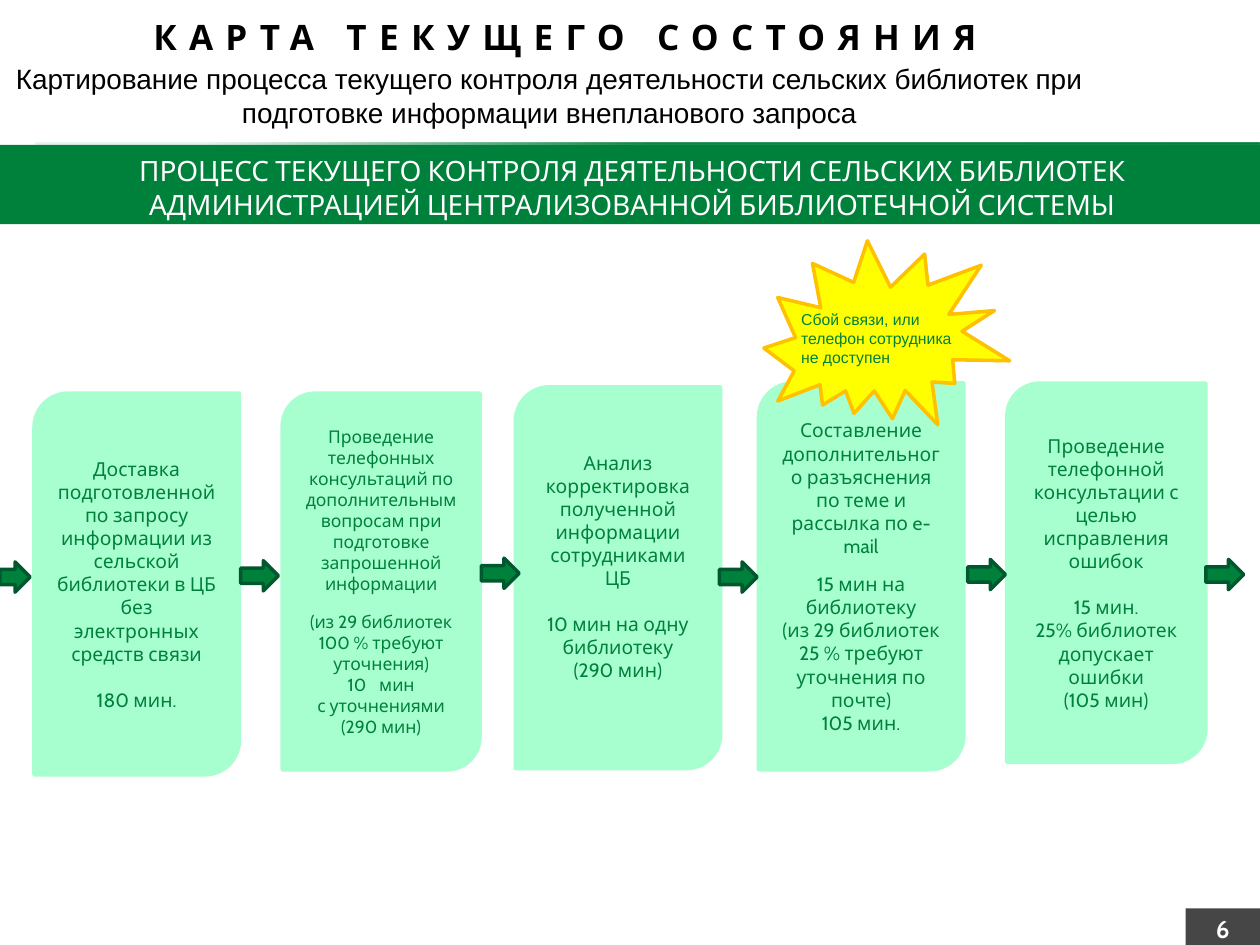
from lxml import etree
from pptx import Presentation
from pptx.dml.color import RGBColor
from pptx.enum.shapes import MSO_SHAPE
from pptx.enum.text import MSO_ANCHOR, PP_ALIGN
from pptx.oxml.ns import qn
from pptx.util import Inches, Pt

RECT = MSO_SHAPE.RECTANGLE
CARD = MSO_SHAPE.ROUND_2_DIAG_RECTANGLE
ARROW = MSO_SHAPE.RIGHT_ARROW
BURST = MSO_SHAPE.EXPLOSION2
TOP, MIDDLE = MSO_ANCHOR.TOP, MSO_ANCHOR.MIDDLE
LEFT, CENTER = PP_ALIGN.LEFT, PP_ALIGN.CENTER

GREEN = RGBColor(0x00, 0x81, 0x3B)
DARK_GREEN = RGBColor(0x00, 0x58, 0x2E)
MINT = RGBColor(0xA7, 0xFF, 0xCF)
YELLOW = RGBColor(0xFF, 0xFF, 0x00)
AMBER = RGBColor(0xFF, 0xC0, 0x00)
GRAY = RGBColor(0x46, 0x46, 0x46)
WHITE = RGBColor(0xFF, 0xFF, 0xFF)
BLACK = RGBColor(0x00, 0x00, 0x00)


class ProcessMap:
    heading_font = "Cabin"
    body_font = "Arial"

    def __init__(self, slide):
        self.slide = slide

    def shape(self, kind, box, fill, line=None):
        item = self.slide.shapes.add_shape(kind, *map(Inches, box))
        item.shadow.inherit = False
        item.fill.solid()
        item.fill.fore_color.rgb = fill
        if line is None:
            item.line.fill.background()
        else:
            item.line.color.rgb = line
            item.line.width = Pt(2)
        return item

    def label(self, item, lines, size, color, font=heading_font, bold=False,
              align=CENTER, anchor=MIDDLE):
        frame = item.text_frame
        frame.word_wrap = True
        frame.vertical_anchor = anchor
        frame.text = "\n".join(lines)
        for paragraph in frame.paragraphs:
            paragraph.alignment = align
            for run in paragraph.runs:
                run.font.size = Pt(size)
                run.font.name = font
                run.font.bold = bold
                run.font.color.rgb = color
        return frame

    def text(self, box, line, size, color, **style):
        item = self.slide.shapes.add_textbox(*map(Inches, box))
        return self.label(item, [line], size, color, **style)

    def card(self, box, lines, size, gap):
        """A process step; the gap in points parts the action from its timing."""
        item = self.shape(CARD, box, MINT, MINT)
        frame = self.label(item, lines, size, GREEN)
        frame.paragraphs[1].space_before = Pt(gap)
        return frame

    def arrow(self, left, top, width=0.3):
        self.shape(ARROW, (left, top, width, 0.24), GREEN, DARK_GREEN)

    def fading_line(self, box, stops):
        """A thin line that fades to the left; stops are (position, opacity)."""
        item = self.shape(RECT, box, GREEN)
        item.fill.gradient()
        item.fill.gradient_angle = 180
        stop_list = next(item._element.iter(qn("a:gsLst")))
        for old_stop in list(stop_list):
            stop_list.remove(old_stop)
        for position, opacity in stops:
            stop = etree.SubElement(stop_list, qn("a:gs"), pos=str(position * 1000))
            color = etree.SubElement(stop, qn("a:srgbClr"), val=str(GREEN))
            etree.SubElement(color, qn("a:alpha"), val=str(opacity * 1000))

    def number(self, paragraph, start):
        """Plain automatic numbering with a hanging indent."""
        props = paragraph._p.get_or_add_pPr()
        props.set("marL", str(Inches(0.25)))
        props.set("indent", str(Inches(-0.25)))
        etree.SubElement(props, qn("a:buAutoNum"), type="arabicPlain", startAt=str(start))


def main():
    prs = Presentation()
    prs.slide_width, prs.slide_height = Inches(10), Inches(7.5)
    process = ProcessMap(prs.slides.add_slide(prs.slide_layouts[6]))

    # Page number
    page = process.shape(RECT, (9.41, 7.21, 0.59, 0.32), GRAY)
    process.label(page, ["6"], 14, WHITE, bold=True)

    # Title and subtitle
    title = process.text((0.98, 0.07, 7.01, 0.44), "КАРТА ТЕКУЩЕГО СОСТОЯНИЯ",
                         20, BLACK, bold=True, anchor=TOP)
    title.paragraphs[0].runs[0]._r.get_or_add_rPr().set("spc", "700")
    process.text((0.02, 0.44, 8.68, 0.64),
                 "Картирование процесса текущего контроля деятельности сельских "
                 "библиотек при подготовке информации внепланового запроса",
                 16, BLACK, font=process.body_font, anchor=TOP)

    # Green band
    process.fading_line((0.28, 1.13, 9.72, 0.02), [(2, 100), (50, 95), (86, 10)])
    process.shape(RECT, (0, 1.15, 10.01, 0.63), GREEN)
    process.text((0.02, 1.19, 10, 0.59),
                 "ПРОЦЕСС ТЕКУЩЕГО КОНТРОЛЯ ДЕЯТЕЛЬНОСТИ СЕЛЬСКИХ БИБЛИОТЕК "
                 "АДМИНИСТРАЦИЕЙ ЦЕНТРАЛИЗОВАННОЙ БИБЛИОТЕЧНОЙ СИСТЕМЫ", 16, WHITE)

    # Process steps
    process.card((0.27, 3.12, 1.63, 3.03), [
        "Доставка подготовленной по запросу информации из сельской библиотеки "
        "в ЦБ без электронных средств связи",
        "180 мин."], 11, 13)
    consultation = process.card((2.24, 3.12, 1.57, 2.99), [
        "Проведение телефонных консультаций по дополнительным вопросам "
        "при подготовке запрошенной информации",
        "(из 29 библиотек 100 % требуют уточнения)",
        "мин",
        "с уточнениями",
        "(290 мин)"], 10, 9.5)
    process.number(consultation.paragraphs[2], 10)
    analysis = process.card((4.09, 3.07, 1.63, 3.03), [
        "Анализ корректировка полученной информации сотрудниками ЦБ",
        "10 мин на одну библиотеку",
        "(290 мин)"], 11, 13)
    analysis.margin_bottom = Inches(0.23)
    process.card((6.02, 3.04, 1.63, 3.07), [
        "Составление дополнительного разъяснения по теме и рассылка по e-mail",
        "15 мин на библиотеку",
        "(из 29 библиотек 25 % требуют уточнения по почте)",
        "105 мин."], 11, 8.5)
    process.card((7.99, 3.04, 1.58, 3.01), [
        "Проведение телефонной консультации с целью исправления ошибок",
        "15 мин.",
        "25% библиотек допускает ошибки",
        "(105 мин)"], 11, 13)

    # Arrows between the steps
    process.arrow(0, 4.46, width=0.24)
    for left, top in [(1.91, 4.45), (3.82, 4.43), (5.71, 4.46), (7.68, 4.44), (9.57, 4.44)]:
        process.arrow(left, top)

    # Problem burst
    burst = process.shape(BURST, (6.13, 1.81, 1.84, 1.75), YELLOW, AMBER)
    burst.rotation = 30.6
    process.text((6.26, 2.41, 1.45, 0.56), "Сбой связи, или телефон сотрудника не доступен",
                 9, GREEN, font=process.body_font, align=LEFT, anchor=TOP)

    prs.save("out.pptx")


if __name__ == "__main__":
    main()
